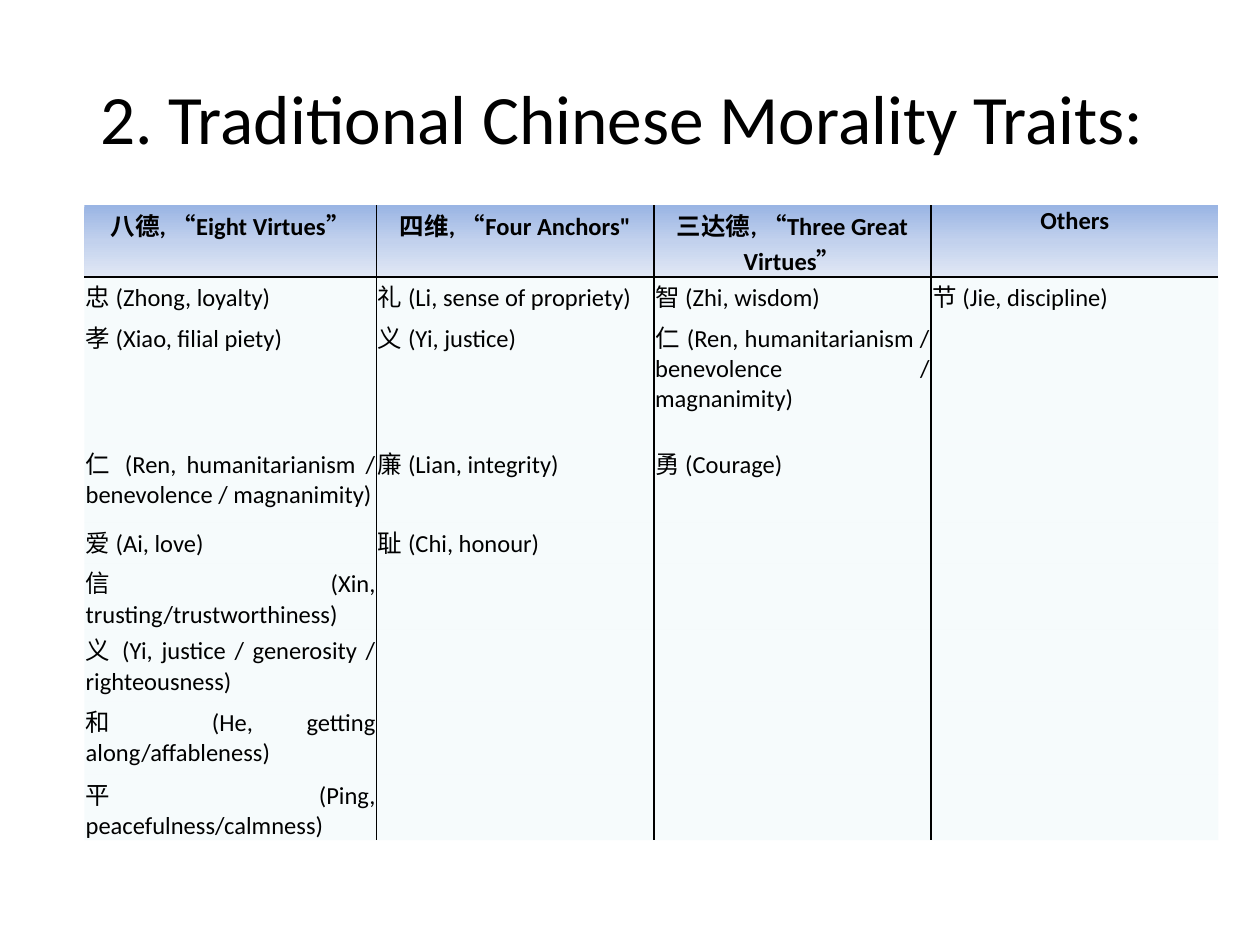
from dataclasses import dataclass

from pptx import Presentation
from pptx.dml.color import RGBColor
from pptx.enum.text import MSO_ANCHOR, PP_ALIGN
from pptx.oxml import parse_xml
from pptx.oxml.ns import nsdecls
from pptx.util import Inches, Pt

TITLE = "2. Traditional Chinese Morality Traits: "
TRAITS = {
    "八德, “Eight Virtues”": [
        "忠 (Zhong, loyalty)",
        "孝 (Xiao, filial piety)",
        "仁 (Ren, humanitarianism / benevolence / magnanimity)",
        "爱 (Ai, love)",
        "信 (Xin, trusting/trustworthiness)",
        "义 (Yi, justice / generosity / righteousness)",
        "和 (He, getting along/affableness)",
        "平 (Ping, peacefulness/calmness)",
    ],
    "四维, “Four Anchors\"": [
        "礼 (Li, sense of propriety) ",
        "义 (Yi, justice)",
        "廉 (Lian, integrity)",
        "耻 (Chi, honour)",
    ],
    "三达德, “Three Great Virtues”": [
        "智 (Zhi, wisdom)",
        "仁 (Ren, humanitarianism / benevolence / magnanimity)",
        "勇 (Courage)",
    ],
    "Others": ["节 (Jie, discipline)"],
}
COLUMN_WIDTHS = [2.32, 2.2, 2.2, 2.28]
ROW_HEIGHTS = [0.57, 0.32, 1, 0.63, 0.32, 0.53, 0.57, 0.58, 0.52]


@dataclass(frozen=True)
class Theme:
    font: str = "Calibri"
    title_size: float = 39.6
    table_size: float = 14
    text: str = "000000"
    body: str = "DBEEF4"
    body_alpha: int = 23
    header: tuple = ((0, "9AB5E4"), (50, "C2D1ED"), (100, "E1E8F5"))
    border_width: float = 1


THEME = Theme()


def style_paragraph(paragraph, size, alignment, bold=False):
    paragraph.alignment = alignment
    paragraph.font.name = THEME.font
    paragraph.font.size = Pt(size)
    paragraph.font.bold = bold
    paragraph.font.color.rgb = RGBColor.from_string(THEME.text)


def color_xml(color, inner=""):
    return f'<a:srgbClr val="{color}">{inner}</a:srgbClr>'


def add_properties(cell, tag, inner, attributes=""):
    xml = f'<a:{tag} {nsdecls("a")} {attributes}>{inner}</a:{tag}>'
    cell._tc.get_or_add_tcPr().append(parse_xml(xml))


def add_borders(cell, row, column):
    visible = {
        "lnL": column > 0,
        "lnR": column < len(TRAITS) - 1,
        "lnT": row == 1,
        "lnB": row == 0,
    }
    for tag, shown in visible.items():
        line = f"<a:solidFill>{color_xml(THEME.text)}</a:solidFill>" if shown else "<a:noFill/>"
        add_properties(cell, tag, line, f'w="{Pt(THEME.border_width)}"')


def add_fill(cell, is_header):
    if is_header:
        stops = "".join(
            f'<a:gs pos="{position * 1000}">{color_xml(color)}</a:gs>'
            for position, color in THEME.header
        )
        add_properties(cell, "gradFill", f'<a:gsLst>{stops}</a:gsLst><a:lin ang="5400000" scaled="0"/>')
    else:
        alpha = f'<a:alpha val="{THEME.body_alpha * 1000}"/>'
        add_properties(cell, "solidFill", color_xml(THEME.body, alpha))


def add_title(slide):
    shape = slide.shapes.add_textbox(Inches(0.5), Inches(0.3), Inches(9), Inches(1.25))
    frame = shape.text_frame
    frame.word_wrap = True
    frame.vertical_anchor = MSO_ANCHOR.MIDDLE
    frame.text = TITLE
    style_paragraph(frame.paragraphs[0], THEME.title_size, PP_ALIGN.CENTER)


def add_traits_table(slide):
    table = slide.shapes.add_table(
        len(ROW_HEIGHTS), len(COLUMN_WIDTHS),
        Inches(0.67), Inches(1.63), Inches(sum(COLUMN_WIDTHS)), Inches(sum(ROW_HEIGHTS)),
    ).table
    table.first_row = False
    table.horz_banding = False
    for column, width in zip(table.columns, COLUMN_WIDTHS):
        column.width = Inches(width)
    for row, height in zip(table.rows, ROW_HEIGHTS):
        row.height = Inches(height)

    for column, (heading, traits) in enumerate(TRAITS.items()):
        texts = [heading, *traits]
        for row in range(len(ROW_HEIGHTS)):
            cell = table.cell(row, column)
            is_header = row == 0
            cell.text = texts[row] if row < len(texts) else ""
            cell.margin_left = cell.margin_right = cell.margin_top = Inches(0.01)
            cell.margin_bottom = 0
            alignment = PP_ALIGN.CENTER if is_header else PP_ALIGN.JUSTIFY
            style_paragraph(cell.text_frame.paragraphs[0], THEME.table_size, alignment, is_header)
            add_borders(cell, row, column)
            add_fill(cell, is_header)


def main():
    presentation = Presentation()
    presentation.slide_width = Inches(10)
    presentation.slide_height = Inches(7.5)
    slide = presentation.slides.add_slide(presentation.slide_layouts[6])
    add_title(slide)
    add_traits_table(slide)
    presentation.save("out.pptx")


if __name__ == "__main__":
    main()
